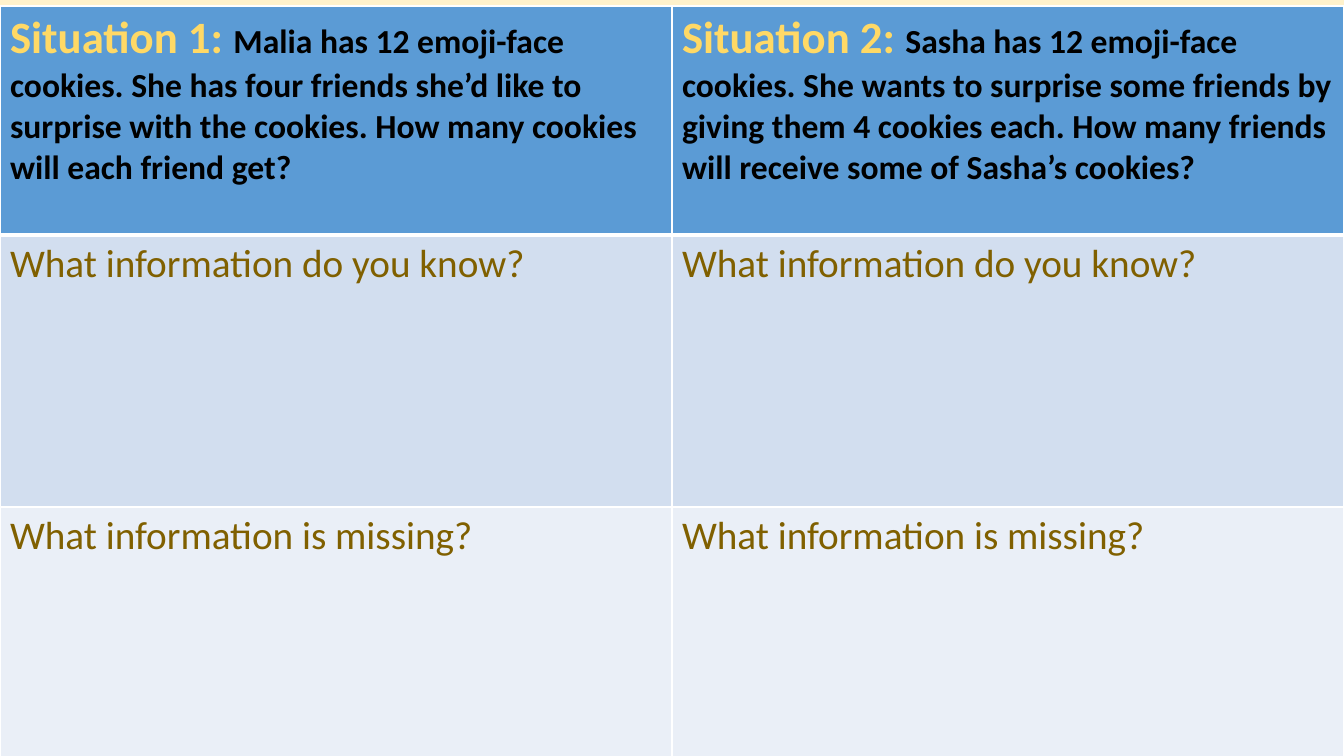
from lxml.etree import SubElement
from pptx import Presentation
from pptx.dml.color import RGBColor
from pptx.oxml.ns import qn
from pptx.util import Pt

# Content
SITUATIONS = [
    ("Situation 1: ", "Malia has 12 emoji-face cookies. She has four friends she’d like to "
     "surprise with the cookies. How many cookies will each friend get?"),
    ("Situation 2: ", "Sasha has 12 emoji-face cookies. She wants to surprise some friends by "
     "giving them 4 cookies each. How many friends will receive some of Sasha’s cookies?"),
]
QUESTIONS = ["What information do you know?", "What information is missing?"]

# Layout and colours
SLIDE_W, SLIDE_H = 960, 540
TABLE_TOP = 4.3
ROW_HEIGHTS = [163.5, 194.4, 194.4]
ROW_FILLS = ["5B9BD5", "D2DEEF", "EAEFF7"]
BACKGROUND, BORDER = "FFF2CC", "FFFFFF"
HEADING, STORY, QUESTION = "FFD966", "000000", "806000"


def rgb(value):
    return RGBColor.from_string(value)


def add_text(p, text, size, color, bold=False):
    r = p.add_run()
    r.text = text
    r.font.name = "Calibri"
    r.font.size = Pt(size)
    r.font.bold = bold
    r.font.color.rgb = rgb(color)


def set_borders(cell, top, bottom):
    tc_pr = cell._tc.get_or_add_tcPr()
    for side, width in (("L", 1), ("R", 1), ("T", top), ("B", bottom)):
        line = SubElement(tc_pr, qn(f"a:ln{side}"), w=str(Pt(width)))
        fill = SubElement(line, qn("a:solidFill"))
        SubElement(fill, qn("a:srgbClr"), val=BORDER)


def main():
    prs = Presentation()
    prs.slide_width, prs.slide_height = Pt(SLIDE_W), Pt(SLIDE_H)
    s = prs.slides.add_slide(prs.slide_layouts[6])
    s.background.fill.solid()
    s.background.fill.fore_color.rgb = rgb(BACKGROUND)

    # Table grid
    rows, cols = len(ROW_HEIGHTS), len(SITUATIONS)
    table = s.shapes.add_table(rows, cols, 0, Pt(TABLE_TOP),
                               Pt(SLIDE_W), Pt(sum(ROW_HEIGHTS))).table
    for row, height in zip(table.rows, ROW_HEIGHTS):
        row.height = Pt(height)

    # Cells: situations in the header, the same questions under each
    for i in range(rows):
        for j, (heading, story) in enumerate(SITUATIONS):
            cell = table.cell(i, j)
            set_borders(cell, top=3 if i == 1 else 1, bottom=3 if i == 0 else 1)
            cell.fill.solid()
            cell.fill.fore_color.rgb = rgb(ROW_FILLS[i])
            p = cell.text_frame.paragraphs[0]
            if i == 0:
                add_text(p, heading, size=32, color=HEADING, bold=True)
                add_text(p, story, size=24, color=STORY, bold=True)
            else:
                add_text(p, QUESTIONS[i - 1], size=28, color=QUESTION)

    prs.save("out.pptx")


if __name__ == "__main__":
    main()
